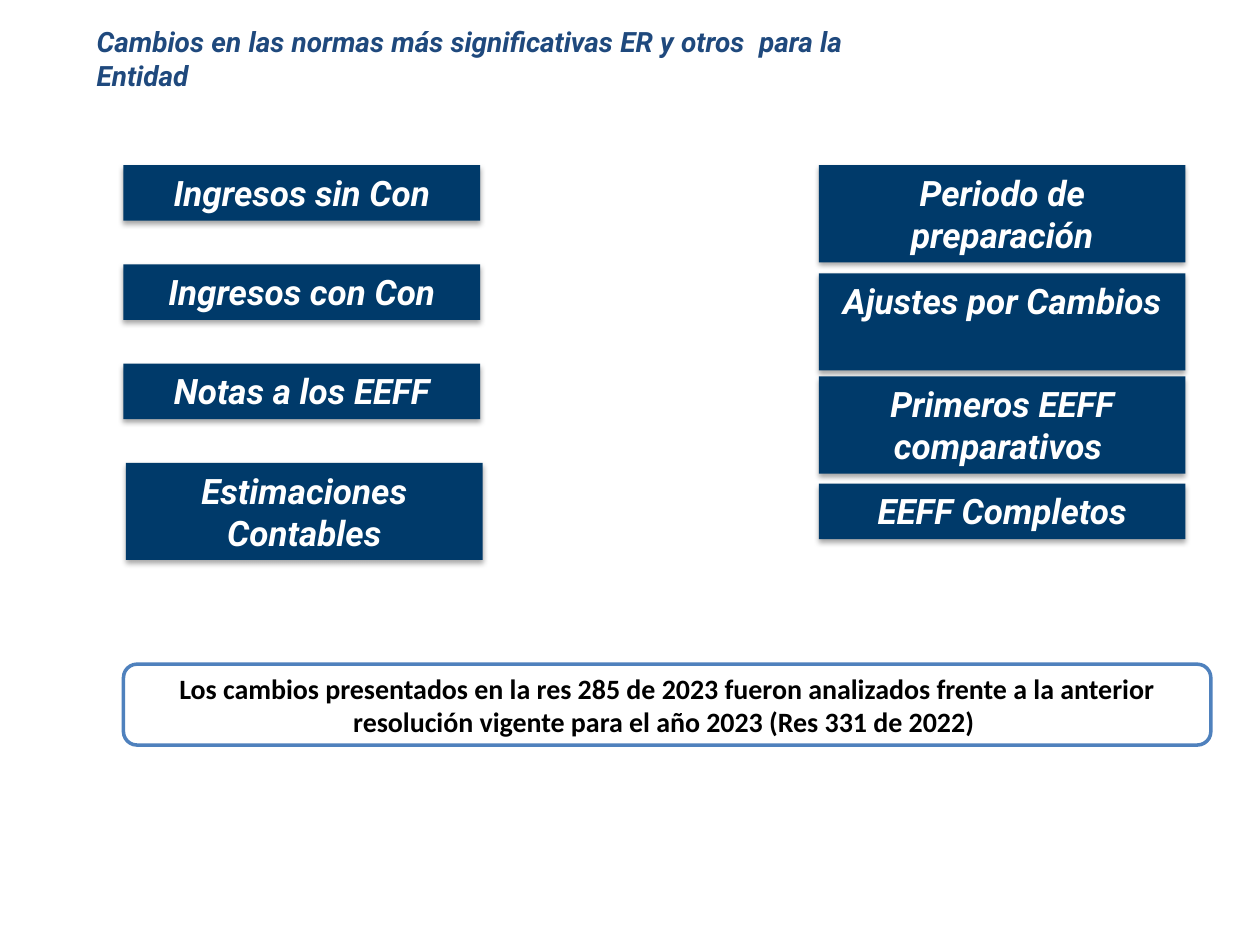
from dataclasses import dataclass

from lxml import etree
from pptx import Presentation
from pptx import util as u
from pptx.dml.color import RGBColor
from pptx.enum import shapes, text
from pptx.oxml import ns

COLORS = {
    "title": "1F497D",
    "navy": "003A6A",
    "border": "4F81BD",
    "white": "FFFFFF",
    "black": "000000",
}
ONE_LINE = 1.12
TWO_LINES = 1.96
COLUMN_TOP = 3.33
LEFT_STEP = 2.0


@dataclass(frozen=True)
class Box:
    left: float
    top: float
    width: float
    height: float

    def lengths(self) -> tuple:
        return tuple(u.Cm(value) for value in (self.left, self.top, self.width, self.height))


@dataclass(frozen=True)
class TextStyle:
    font: str
    size: int
    color: str
    italic: bool
    alignment: text.PP_ALIGN
    anchor: text.MSO_ANCHOR = text.MSO_ANCHOR.TOP


@dataclass(frozen=True)
class Topic:
    label: str
    box: Box


TITLE = TextStyle("Roboto", 16, "title", True, text.PP_ALIGN.JUSTIFY)
TOPIC = TextStyle("Roboto", 20, "white", True, text.PP_ALIGN.CENTER)
NOTE = TextStyle("Calibri", 16, "black", False, text.PP_ALIGN.CENTER, text.MSO_ANCHOR.MIDDLE)

LEFT_LABELS = ["Ingresos sin Con", "Ingresos con Con", "Notas a los EEFF"]
LEFT_TOPICS = [
    Topic(label, Box(2.49, COLUMN_TOP + row * LEFT_STEP, 7.19, ONE_LINE))
    for row, label in enumerate(LEFT_LABELS)
] + [Topic("Estimaciones Contables", Box(2.54, COLUMN_TOP + 3 * LEFT_STEP, 7.19, TWO_LINES))]
RIGHT_TOPICS = [
    Topic(label, Box(16.51, top, 7.39, height))
    for label, top, height in [
        ("Periodo de preparación", COLUMN_TOP, TWO_LINES),
        ("Ajustes por Cambios", 5.51, TWO_LINES),
        ("Primeros EEFF comparativos ", 7.59, TWO_LINES),
        ("EEFF Completos", 9.75, ONE_LINE),
    ]
]


def rgb(name: str) -> RGBColor:
    return RGBColor.from_string(COLORS[name])


def write_text(shape, content: str, style: TextStyle) -> None:
    frame = shape.text_frame
    frame.word_wrap = True
    frame.auto_size = text.MSO_AUTO_SIZE.NONE
    frame.vertical_anchor = style.anchor
    paragraph = frame.paragraphs[0]
    paragraph.alignment = style.alignment
    run = paragraph.add_run()
    run.text = content
    run.font.name = style.font
    run.font.size = u.Pt(style.size)
    run.font.bold = True
    run.font.italic = style.italic
    run.font.color.rgb = rgb(style.color)


def add_filled(slide, kind: shapes.MSO_SHAPE, box: Box, fill: str):
    shape = slide.shapes.add_shape(kind, *box.lengths())
    shape.shadow.inherit = False
    shape.fill.solid()
    shape.fill.fore_color.rgb = rgb(fill)
    return shape


def add_drop_shadow(shape) -> None:
    effects = shape.element.spPr.find(ns.qn("a:effectLst"))
    shadow = etree.SubElement(
        effects, ns.qn("a:outerShdw"),
        blurRad="40000", dist="23000", dir="5400000", rotWithShape="0",
    )
    color = etree.SubElement(shadow, ns.qn("a:srgbClr"), val=COLORS["black"])
    etree.SubElement(color, ns.qn("a:alpha"), val="35000")


def add_topic(slide, topic: Topic) -> None:
    shape = add_filled(slide, shapes.MSO_SHAPE.RECTANGLE, topic.box, "navy")
    shape.line.fill.background()
    add_drop_shadow(shape)
    write_text(shape, topic.label, TOPIC)


def add_note(slide, content: str, box: Box) -> None:
    shape = add_filled(slide, shapes.MSO_SHAPE.ROUNDED_RECTANGLE, box, "white")
    shape.line.color.rgb = rgb("border")
    shape.line.width = u.Pt(2)
    write_text(shape, content, NOTE)


def main() -> None:
    presentation = Presentation()
    presentation.slide_width = u.Cm(25.4)
    presentation.slide_height = u.Cm(19.05)
    slide = presentation.slides.add_slide(presentation.slide_layouts[6])
    title = slide.shapes.add_textbox(*Box(1.7, 0.38, 15.54, 1.63).lengths())
    write_text(title, "Cambios en las normas más significativas ER y otros  para la Entidad", TITLE)
    for topic in LEFT_TOPICS + RIGHT_TOPICS:
        add_topic(slide, topic)
    add_note(
        slide,
        "Los cambios presentados en la res 285 de 2023 fueron analizados frente a la "
        "anterior resolución vigente para el año 2023 (Res 331 de 2022) ",
        Box(2.49, 13.39, 21.92, 1.63),
    )
    presentation.save("out.pptx")


if __name__ == "__main__":
    main()
